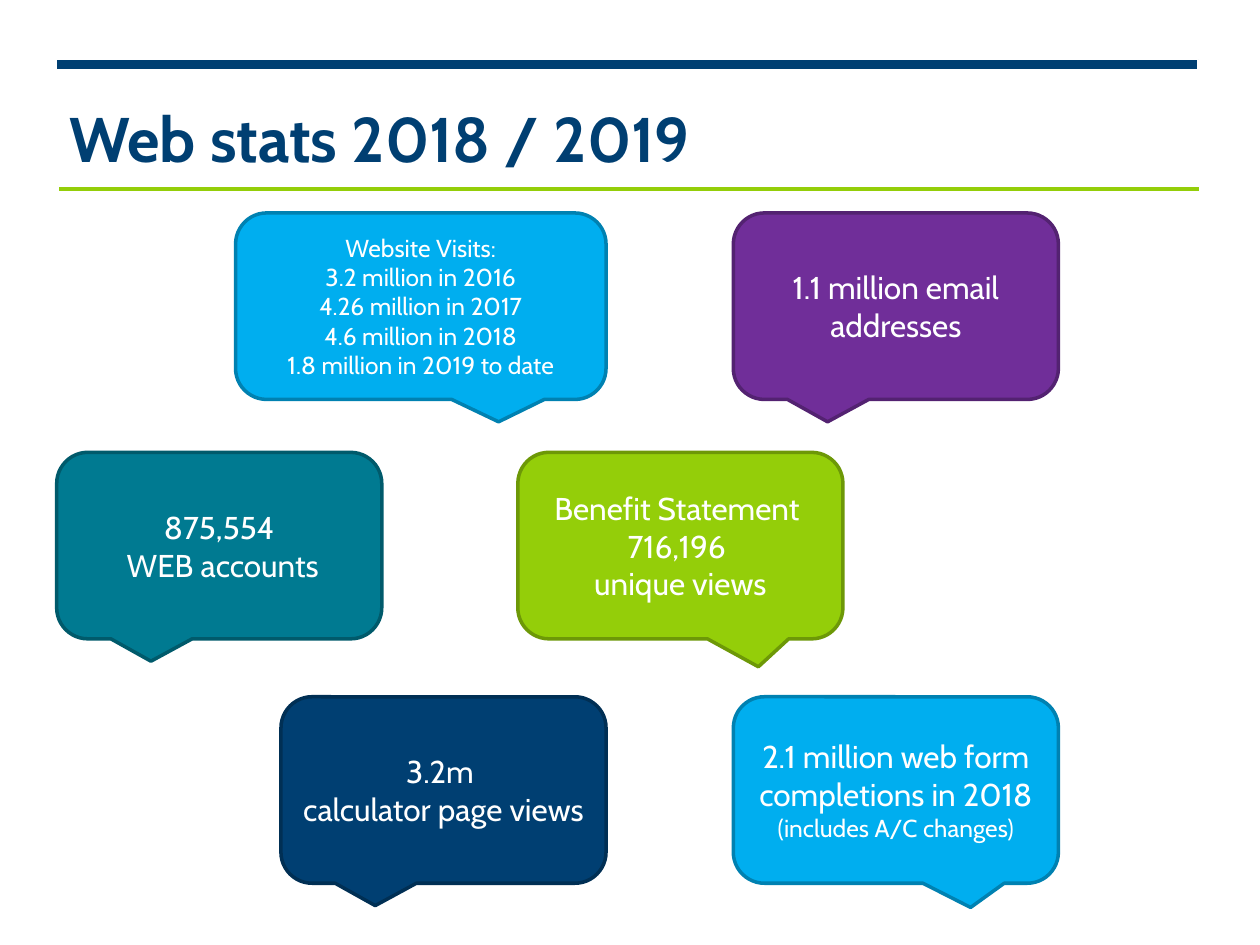
from pptx import Presentation
from pptx.dml.color import RGBColor
from pptx.enum.shapes import MSO_SHAPE
from pptx.enum.text import MSO_ANCHOR, MSO_AUTO_SIZE, PP_ALIGN
from pptx.util import Inches, Pt

RECTANGLE = MSO_SHAPE.RECTANGLE
CALLOUT = MSO_SHAPE.ROUNDED_RECTANGULAR_CALLOUT
TOP, MIDDLE = MSO_ANCHOR.TOP, MSO_ANCHOR.MIDDLE
LEFT, CENTER = PP_ALIGN.LEFT, PP_ALIGN.CENTER
NO_AUTOFIT = MSO_AUTO_SIZE.NONE

FONT = "Cabin"
TITLE_ONLY = 5
COLORS = {
    "white": "FFFFFF",
    "navy": "003F72", "navy_edge": "002F54",
    "green": "94CE09", "green_edge": "6D9807",
    "blue": "00AEEF", "blue_edge": "0081B1",
    "purple": "702E99", "purple_edge": "532271",
    "teal": "007A91", "teal_edge": "005A6B",
}

ROWS = (1.69, 3.59, 5.53)
CALLOUT_WIDTH, CALLOUT_HEIGHT = 2.58, 1.48
LEFT_TAIL = (-0.21, 0.62)
CALLOUTS = [
    (1.87, ROWS[0], 2.94, "blue", (0.21, 0.62),
     [("Website Visits:", 14), ("3.2 million in 2016", 14),
      ("4.26 million in 2017", 14), ("4.6 million in 2018", 14),
      ("1.8 million in 2019 to date", 14)]),
    (5.82, ROWS[0], CALLOUT_WIDTH, "purple", LEFT_TAIL,
     [("1.1 million email addresses", 18)]),
    (0.45, ROWS[1], CALLOUT_WIDTH, "teal", LEFT_TAIL,
     [("875,554", 18), (" WEB accounts", 18)]),
    (4.11, ROWS[1], CALLOUT_WIDTH, "green", (0.24, 0.65),
     [("Benefit Statement ", 18), ("716,196 ", 18), ("unique views", 18)]),
    (2.23, ROWS[2], CALLOUT_WIDTH, "navy", LEFT_TAIL,
     [("3.2m ", 18), ("calculator page views", 18)]),
    (5.82, ROWS[2], CALLOUT_WIDTH, "blue", (0.23, 0.63),
     [("2.1 million web form completions in 2018", 18),
      ("(includes A/C changes)", 14)]),
]


def color(name):
    return RGBColor.from_string(COLORS[name])


def add_filled_shape(slide, kind, box, fill, edge, edge_width):
    shape = slide.shapes.add_shape(kind, *(Inches(length) for length in box))
    shape.shadow.inherit = False
    shape.fill.solid()
    shape.fill.fore_color.rgb = color(fill)
    shape.line.color.rgb = color(edge)
    shape.line.width = Pt(edge_width)
    return shape


def write_lines(text_frame, lines, color_name, alignment, bold=False):
    text_frame.word_wrap = True
    for index, (text, size) in enumerate(lines):
        paragraph = text_frame.add_paragraph() if index else text_frame.paragraphs[0]
        paragraph.alignment = alignment
        run = paragraph.add_run()
        run.text = text
        run.font.name = FONT
        run.font.size = Pt(size)
        run.font.bold = bold
        run.font.color.rgb = color(color_name)


def add_header(slide, left, top, width):
    add_filled_shape(slide, RECTANGLE, (left, top, width, 0.08), "navy", "white", 0.75)
    add_filled_shape(slide, RECTANGLE, (left + 0.01, top + 1.01, width, 0.04),
                     "green", "white", 0.75)
    title = slide.shapes.title
    title.left, title.top = Inches(left), Inches(top + 0.27)
    title.width, title.height = Inches(9), Inches(0.54)
    title.text_frame.auto_size = NO_AUTOFIT
    title.text_frame.vertical_anchor = TOP
    write_lines(title.text_frame, [("Web stats 2018 / 2019", 36)], "navy", LEFT, bold=True)


def add_callout(slide, box, fill, tail, lines):
    shape = add_filled_shape(slide, CALLOUT, box, fill, fill + "_edge", 2)
    shape.adjustments[0], shape.adjustments[1] = tail
    shape.text_frame.vertical_anchor = MIDDLE
    write_lines(shape.text_frame, lines, "white", CENTER)


def main():
    presentation = Presentation()
    presentation.slide_width = Inches(10)
    presentation.slide_height = Inches(7.5)
    slide = presentation.slides.add_slide(presentation.slide_layouts[TITLE_ONLY])
    add_header(slide, 0.45, 0.47, 9.06)
    for left, top, width, fill, tail, lines in CALLOUTS:
        add_callout(slide, (left, top, width, CALLOUT_HEIGHT), fill, tail, lines)
    presentation.save("out.pptx")


if __name__ == "__main__":
    main()
